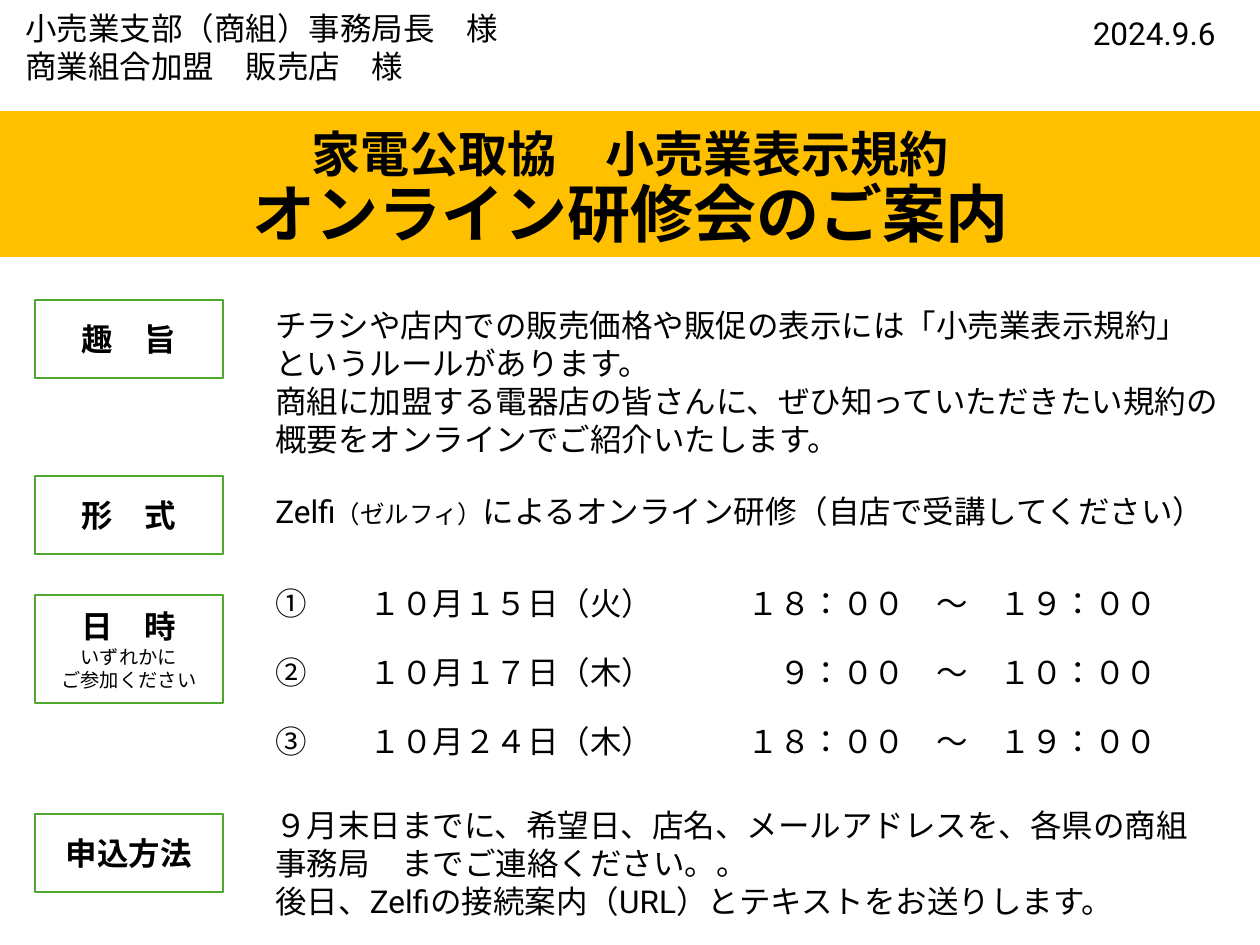
from pptx import Presentation
from pptx.dml.color import RGBColor
from pptx.enum.lang import MSO_LANGUAGE_ID
from pptx.enum.shapes import MSO_SHAPE
from pptx.enum.text import MSO_ANCHOR, MSO_AUTO_SIZE, PP_ALIGN
from pptx.util import Pt

BLACK = RGBColor(0, 0, 0)
WHITE = RGBColor(255, 255, 255)
GOLD = RGBColor(0xFF, 0xC0, 0x00)
GREEN = RGBColor(0x4E, 0xA7, 0x2E)

FONT = "Roboto"
SCALE = 914400 / 126
LABEL_X, LABEL_W, LABEL_H = 35, 188, 78
BODY_X = 263


def px(*nums):
    return [round(n * SCALE) for n in nums]


def style(para, size=18, bold=False, align=PP_ALIGN.LEFT):
    para.alignment = align
    font = para.font
    font.name, font.size, font.bold = FONT, Pt(size), bold
    font.color.rgb = BLACK
    font.language_id = MSO_LANGUAGE_ID.JAPANESE


def paras(frame, count):
    """Return the frame's first paragraph and as many new ones as needed."""
    return [frame.paragraphs[0]] + [frame.add_paragraph() for _ in range(count - 1)]


def add_title(slide, small, large):
    title = slide.shapes.title
    title.left, title.top, title.width, title.height = px(0, 111, 1260, 146)
    title.fill.solid()
    title.fill.fore_color.rgb = GOLD
    frame = title.text_frame
    frame.auto_size = MSO_AUTO_SIZE.NONE
    frame.vertical_anchor = MSO_ANCHOR.BOTTOM
    para = frame.paragraphs[0]
    style(para, 28, True, PP_ALIGN.CENTER)
    para.line_spacing = 0.9
    para.add_run().text = small
    para.add_line_break()
    run = para.add_run()
    run.text = large
    run.font.size = Pt(36)


def add_label(slide, top, head, notes=(), height=LABEL_H):
    box = slide.shapes.add_shape(
        MSO_SHAPE.RECTANGLE, *px(LABEL_X, top, LABEL_W, height))
    box.shadow.inherit = False
    box.fill.solid()
    box.fill.fore_color.rgb = WHITE
    box.line.color.rgb = GREEN
    box.line.width = Pt(1.5)
    frame = box.text_frame
    frame.vertical_anchor = MSO_ANCHOR.MIDDLE
    first, *rest = paras(frame, 1 + len(notes))
    first.text = head
    style(first, 18, True, PP_ALIGN.CENTER)
    for para, note in zip(rest, notes):
        para.text = note
        style(para, 11, False, PP_ALIGN.CENTER)


def add_text(slide, left, top, width, height, lines, align=PP_ALIGN.LEFT):
    """Add a text box; each line is a list of (text, size or None) runs or a string."""
    frame = slide.shapes.add_textbox(*px(left, top, width, height)).text_frame
    frame.word_wrap = True
    frame.auto_size = MSO_AUTO_SIZE.SHAPE_TO_FIT_TEXT
    for para, line in zip(paras(frame, len(lines)), lines):
        style(para, align=align)
        for text, size in [(line, None)] if isinstance(line, str) else line:
            run = para.add_run()
            run.text = text
            if size:
                run.font.size = Pt(size)


def main():
    deck = Presentation()
    deck.slide_width, deck.slide_height = px(1260, 945)
    slide = deck.slides.add_slide(deck.slide_layouts[5])

    add_text(slide, 13, 3, 576, 89,
             ["小売業支部（商組）事務局長　様", "商業組合加盟　販売店　様"])
    add_text(slide, 1042, 8, 186, 50, ["2024.9.6"], PP_ALIGN.RIGHT)
    add_title(slide, "家電公取協　小売業表示規約", "オンライン研修会のご案内")

    add_label(slide, 300, "趣　旨")
    add_text(slide, BODY_X, 300, 997, 165, [
        "チラシや店内での販売価格や販促の表示には「小売業表示規約」",
        "というルールがあります。",
        "商組に加盟する電器店の皆さんに、ぜひ知っていただきたい規約の",
        "概要をオンラインでご紹介いたします。",
    ])

    add_label(slide, 476, "形　式")
    add_text(slide, BODY_X, 486, 997, 50, [[
        ("Zelfi", None), ("（ゼルフィ）", 14),
        ("によるオンライン研修（自店で受講してください）", None),
    ]])

    add_label(slide, 595, "日　時", ["いずれかに", "ご参加ください"], 108)
    dates = [
        "①　　１０月１５日（火）　　　１８：００　～　１９：００",
        "②　　１０月１７日（木）　　　　９：００　～　１０：００",
        "③　　１０月２４日（木）　　　１８：００　～　１９：００",
    ]
    for row, date in enumerate(dates):
        add_text(slide, BODY_X, 578 + 69 * row, 934, 50, [date])

    add_label(slide, 814, "申込方法")
    add_text(slide, BODY_X, 800, 944, 127, [
        "９月末日までに、希望日、店名、メールアドレスを、各県の商組事務局　までご連絡ください。。",
        "後日、Zelfiの接続案内（URL）とテキストをお送りします。",
    ])

    deck.save("out.pptx")


if __name__ == "__main__":
    main()
